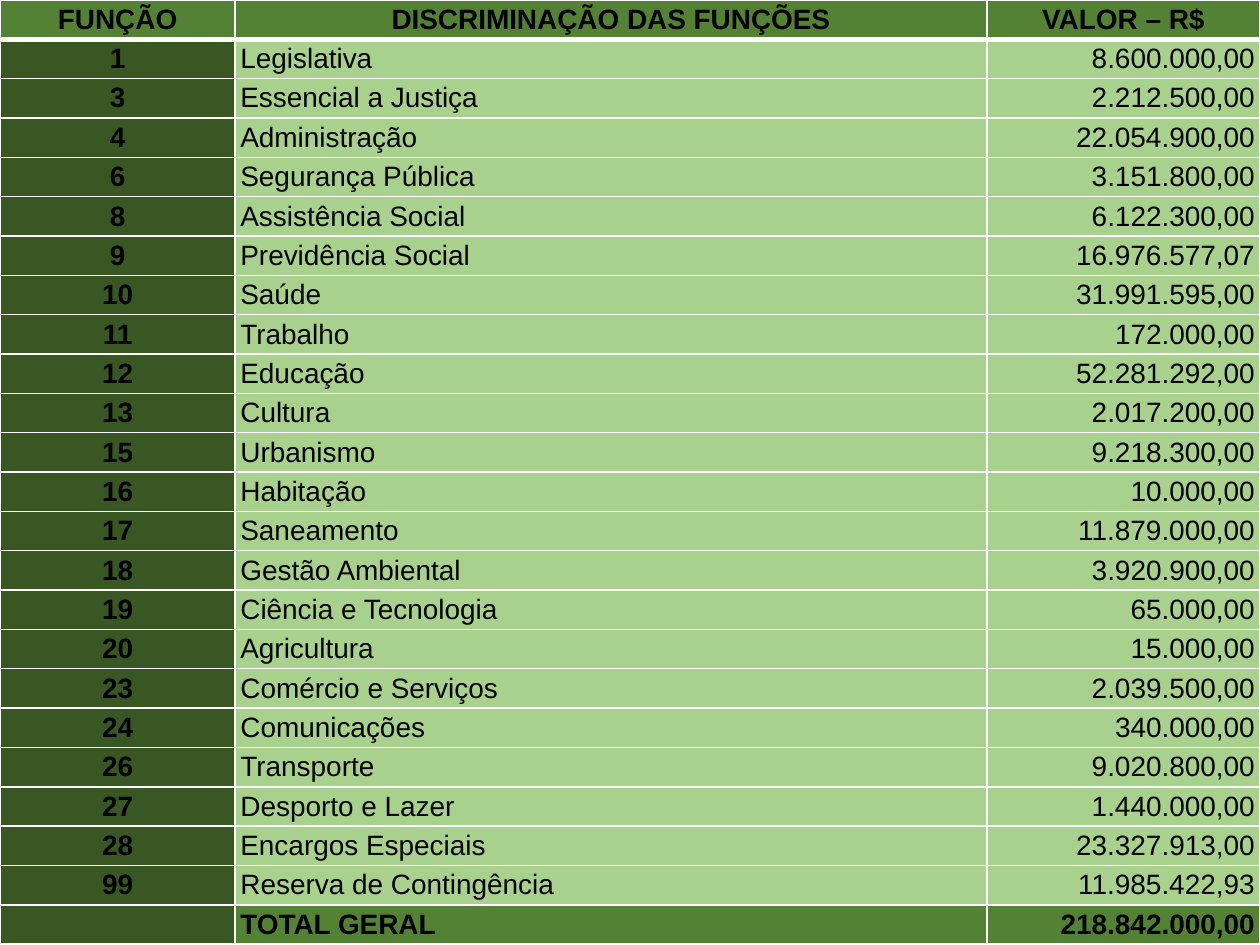
from lxml import etree
from pptx import Presentation
from pptx.dml.color import RGBColor
from pptx.enum.text import MSO_ANCHOR, PP_ALIGN
from pptx.oxml.ns import qn
from pptx.util import Pt

BLACK = RGBColor(0x00, 0x00, 0x00)
WHITE = RGBColor(0xFF, 0xFF, 0xFF)
DARK = RGBColor(0x38, 0x57, 0x23)
GREEN = RGBColor(0x54, 0x82, 0x35)
LIGHT = RGBColor(0xA9, 0xD1, 0x8E)

MIDDLE = MSO_ANCHOR.MIDDLE
CENTER = PP_ALIGN.CENTER
JUSTIFY = PP_ALIGN.JUSTIFY
RIGHT = PP_ALIGN.RIGHT

WIDTH, HEIGHT = 720, 540
COLS = (134.4, 429.6, 156)
ALIGNS = (CENTER, JUSTIFY, RIGHT)

HEAD = ("FUNÇÃO", "DISCRIMINAÇÃO DAS FUNÇÕES", "VALOR – R$")
BODY = (
    ("1", "Legislativa", "8.600.000,00"),
    ("3", "Essencial a Justiça", "2.212.500,00"),
    ("4", "Administração", "22.054.900,00"),
    ("6", "Segurança Pública", "3.151.800,00"),
    ("8", "Assistência Social", "6.122.300,00"),
    ("9", "Previdência Social", "16.976.577,07"),
    ("10", "Saúde", "31.991.595,00"),
    ("11", "Trabalho", "172.000,00"),
    ("12", "Educação", "52.281.292,00"),
    ("13", "Cultura", "2.017.200,00"),
    ("15", "Urbanismo", "9.218.300,00"),
    ("16", "Habitação", "10.000,00"),
    ("17", "Saneamento", "11.879.000,00"),
    ("18", "Gestão Ambiental", "3.920.900,00"),
    ("19", "Ciência e Tecnologia", "65.000,00"),
    ("20", "Agricultura", "15.000,00"),
    ("23", "Comércio e Serviços", "2.039.500,00"),
    ("24", "Comunicações", "340.000,00"),
    ("26", "Transporte", "9.020.800,00"),
    ("27", "Desporto e Lazer", "1.440.000,00"),
    ("28", "Encargos Especiais", "23.327.913,00"),
    ("99", "Reserva de Contingência", "11.985.422,93"),
)
TOTAL = ("", "TOTAL GERAL", "218.842.000,00")


def set_borders(cell, top, bottom):
    """Draw white borders; must run before the cell gets its fill."""
    props = cell._tc.get_or_add_tcPr()
    for side, width in (("L", 1), ("R", 1), ("T", top), ("B", bottom)):
        line = etree.SubElement(props, qn(f"a:ln{side}"), w=str(Pt(width)))
        fill = etree.SubElement(line, qn("a:solidFill"))
        etree.SubElement(fill, qn("a:srgbClr"), val=str(WHITE))


def fill_cell(cell, text, color, align, bold):
    cell.fill.solid()
    cell.fill.fore_color.rgb = color
    cell.vertical_anchor = MIDDLE
    cell.margin_left = cell.margin_right = Pt(3)
    cell.margin_top = cell.margin_bottom = Pt(0)
    para = cell.text_frame.paragraphs[0]
    para.text = text
    para.alignment = align
    font = para.font
    font.name = "Arial"
    font.size = Pt(16)
    font.bold = bold
    font.color.rgb = BLACK


def add_budget(slide):
    rows = (HEAD, *BODY, TOTAL)
    last = len(rows) - 1
    frame = slide.shapes.add_table(
        len(rows), len(COLS), Pt(0), Pt(0), Pt(WIDTH), Pt(HEIGHT))
    table = frame.table
    table.horz_banding = False
    for col, width in zip(table.columns, COLS):
        col.width = Pt(width)

    for r, texts in enumerate(rows):
        table.rows[r].height = Pt(HEIGHT / len(rows))
        strong = r in (0, last)
        for c, text in enumerate(texts):
            cell = table.cell(r, c)
            # Thick rule between the header and the body
            set_borders(cell, 3 if r == 1 else 1, 3 if r == 0 else 1)
            # Dark first column, mid green header and total
            if c == 0 and r > 0:
                color = DARK
            else:
                color = GREEN if strong else LIGHT
            align = CENTER if r == 0 else ALIGNS[c]
            fill_cell(cell, text, color, align, strong or c == 0)


def main():
    deck = Presentation()
    deck.slide_width, deck.slide_height = Pt(WIDTH), Pt(HEIGHT)
    slide = deck.slides.add_slide(deck.slide_layouts[6])
    add_budget(slide)
    deck.save("out.pptx")


if __name__ == "__main__":
    main()
